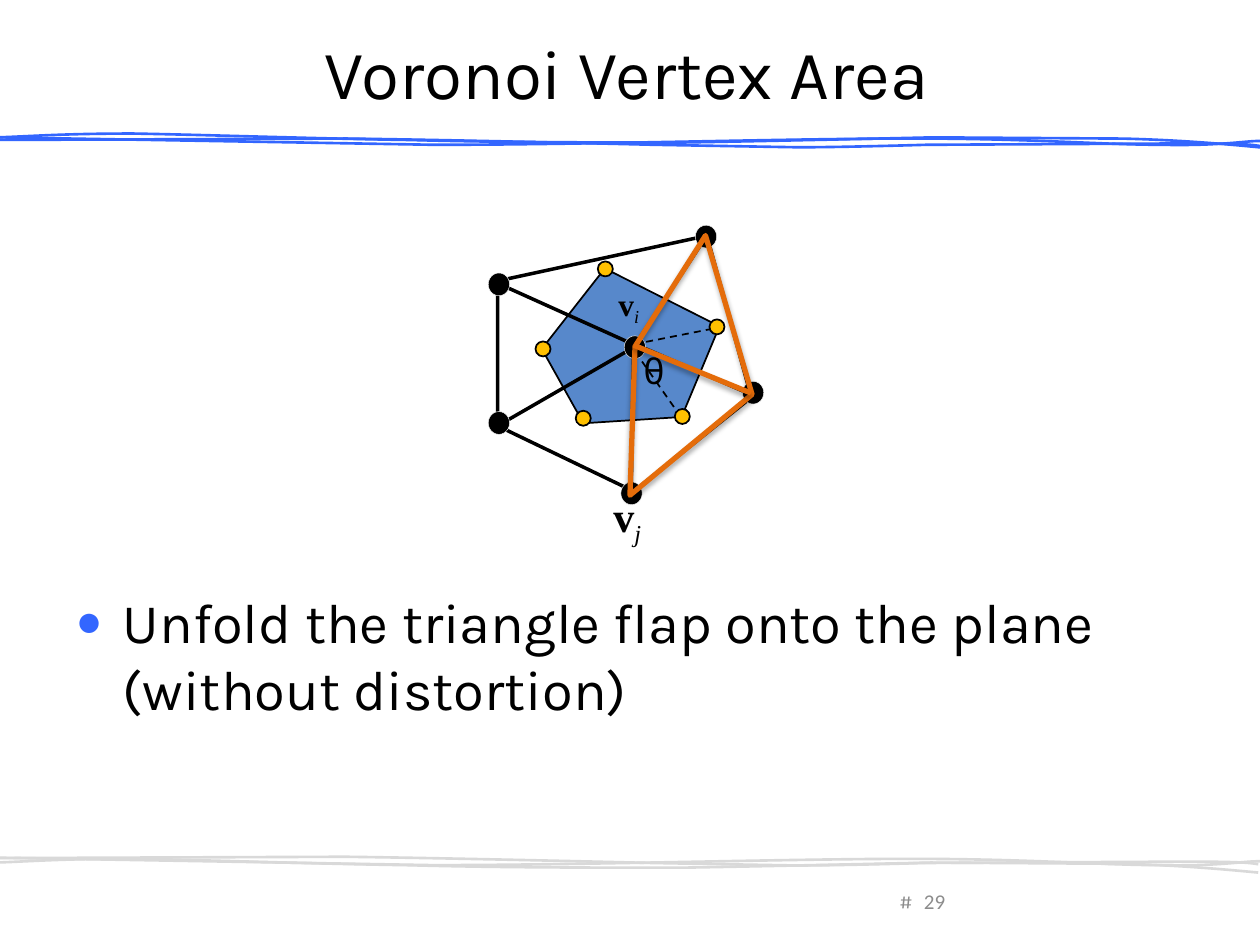
from lxml.etree import SubElement
from pptx import Presentation
from pptx.dml.color import RGBColor
from pptx.enum.dml import MSO_LINE
from pptx.enum.shapes import MSO_CONNECTOR, MSO_SHAPE
from pptx.enum.text import MSO_ANCHOR, MSO_AUTO_SIZE, PP_ALIGN
from pptx.oxml.ns import qn
from pptx.util import Pt

BLACK = RGBColor(0, 0, 0)
WHITE = RGBColor(255, 255, 255)
BLUE = RGBColor(0x33, 0x66, 0xFF)
SILVER = RGBColor(0xD9, 0xD9, 0xD9)
GREY = RGBColor(0x8C, 0x8C, 0x8C)
STEEL = RGBColor(0x57, 0x88, 0xCB)
GOLD = RGBColor(0xFF, 0xC0, 0x00)
ORANGE = RGBColor(0xE4, 0x6C, 0x0A)

deck = Presentation()
deck.slide_width, deck.slide_height = Pt(720), Pt(540)
slide = deck.slides.add_slide(deck.slide_layouts[1])
shapes = slide.shapes


def trace(points, color, width, fill=None, close=False):
    spots = [(Pt(x), Pt(y)) for x, y in points]
    pen = shapes.build_freeform(*spots[0])
    pen.add_line_segments(spots[1:], close=close)
    shape = pen.convert_to_shape()
    shape.shadow.inherit = False
    shape.line.color.rgb = color
    shape.line.width = Pt(width)
    if fill:
        shape.fill.solid()
        shape.fill.fore_color.rgb = fill
    else:
        shape.fill.background()
    return shape


def write(shape, box, runs, size, color=BLACK, font="Karla", **frame):
    shape.left, shape.top, shape.width, shape.height = map(Pt, box)
    text = shape.text_frame
    look = {"word_wrap": True, "auto_size": MSO_AUTO_SIZE.NONE} | frame
    align = look.pop("align", PP_ALIGN.LEFT)
    for key, value in look.items():
        setattr(text, key, value)
    para = text.paragraphs[0]
    para.alignment = align
    para.space_before = Pt(0)
    for words, style in runs:
        run = para.add_run()
        run.text = words
        run.font.color.rgb = color
        for key, value in ({"name": font, "size": Pt(size)} | style).items():
            setattr(run.font, key, value)
    return para


waves = [
    (411.6, (-1, 78.5), [(248, 82.8), (335, 82.8, 451, 79.2, 521, 79.2),
                         (590, 79.2, 631, 82.8, 664, 82.8),
                         (697, 83.5, 711, 80.6, 720, 80.6),
                         (729, 80, 724, 80.6, 719, 80.6)]),
    (414.4, (-1, 78.5), [(19, 77.8, 37, 76.3, 76, 76.3),
                         (116, 77, 181, 79.2, 234, 80),
                         (286, 81.4, 341, 81.4, 391, 81.4),
                         (441, 80.6, 533, 78.5, 533, 78.5), (642, 79.2),
                         (673, 80, 697, 82, 720, 84.2)]),
    (410.4, (-1.5, 80), [(198, 79.2), (261, 80, 374, 82.8, 374, 82.8),
                         (456, 84.2), (482, 84.2, 529, 82.8, 529, 82.8),
                         (679, 82), (711, 82, 716, 82.8, 720, 83.5)]),
]
for color, left, low in [(BLUE, 0, 0), (SILVER, -1, 1)]:
    for drop, start, parts in waves:
        points = [start]
        for part in parts:
            points += zip(part[::2], part[1::2])
        wave = trace([(x + left, y + low * drop) for x, y in points], color, 1.5)
        legs = iter(list(wave._element.iter(qn("a:lnTo"))))
        for part in parts:
            leg = next(legs)
            if len(part) == 6:
                leg.tag = qn("a:cubicBezTo")
                for extra in (next(legs), next(legs)):
                    leg.append(extra[0])
                    extra.getparent().remove(extra)

write(shapes.title, (36, 22, 648, 38), [("Voronoi Vertex Area", {})], 39.6,
      align=PP_ALIGN.CENTER, vertical_anchor=MSO_ANCHOR.MIDDLE,
      margin_right=Pt(10.8))

body = slide.placeholders[1]
para = write(body, (36, 108, 648, 360),
             [("Unfold the triangle flap onto the plane (without distortion)", {})], 32,
             vertical_anchor=MSO_ANCHOR.TOP, margin_top=Pt(227.8))
props = para._p.get_or_add_pPr()
props.set("marL", str(Pt(27)))
props.set("indent", str(Pt(-27)))
tint = SubElement(props, qn("a:buClr"))
SubElement(tint, qn("a:srgbClr"), val=str(BLUE))
SubElement(props, qn("a:buSzPct"), val="80000")
SubElement(props, qn("a:buChar"), char="●")

for words, box, font, align in [
    ("#", (506.9, 504, 21.6, 21.6), "Karla", PP_ALIGN.CENTER),
    ("29", (500.4, 500.4, 46.8, 28.8), "Calibri", PP_ALIGN.RIGHT),
]:
    write(shapes.add_textbox(0, 0, 0, 0), box, [(words, {})], 12, GREY, font,
          align=align, vertical_anchor=MSO_ANCHOR.MIDDLE)

cell = [(309.6, 199.4), (345.6, 153.4), (411.1, 186.5), (389.5, 238.3), (333.4, 241.9)]
ring = [(404.6, 134.6), (284.4, 160.6), (284.4, 243.4), (364.3, 197.3),
        (430.6, 226.1), (362.2, 280.8), (284.4, 243.4)]
fan = [(283, 161.3), (362.9, 197.3), (403.9, 134.6), (429.1, 226.1)]
trace(cell, BLACK, 1, STEEL, True)
trace(ring, BLACK, 2)
trace(fan, BLACK, 2)

for start, end, width, dash in [
    ((362.2, 195.1), (360.7, 279.4), 2, MSO_LINE.SOLID),
    ((362.9, 200.9), (386.6, 234.7), 1, MSO_LINE.DASH),
    ((414, 186.5), (362.9, 196.6), 1, MSO_LINE.DASH),
]:
    edge = shapes.add_connector(MSO_CONNECTOR.STRAIGHT, *map(Pt, start + end))
    edge.line.color.rgb = BLACK
    edge.line.width = Pt(width)
    edge.line.dash_style = dash
    SubElement(edge._element.spPr, qn("a:effectLst"))

nodes = [(285.1, 162.5), (403.5, 135.2), (362.8, 198.4), (285.1, 241.7),
         (360.9, 281.9), (430.4, 224.4)]
sites = [(389.9, 238), (345.9, 153.7), (333.3, 239), (310.3, 199.4), (409.7, 186.8)]
for spots, wide, high, fill, rim, width in [
    (nodes, 12.2, 13, BLACK, WHITE, 0.25),
    (sites, 8.6, 8.6, GOLD, BLACK, 1),
]:
    for x, y in spots:
        dot = shapes.add_shape(MSO_SHAPE.OVAL, Pt(x - wide / 2), Pt(y - high / 2),
                               Pt(wide), Pt(high))
        dot.shadow.inherit = False
        dot.fill.solid()
        dot.fill.fore_color.rgb = fill
        dot.line.color.rgb = rim
        dot.line.width = Pt(width)

write(shapes.add_textbox(0, 0, 0, 0), (362.9, 196.6, 21.6, 29.5), [("θ", {})], 20,
      margin_left=Pt(5), margin_right=Pt(5), margin_top=Pt(2.9), margin_bottom=Pt(2.9))
for mark, box, size in [
    ("i", (346.3, 159.1, 27.4, 28.8), 18),
    ("j", (343.4, 276.5, 31, 36), 24),
]:
    para = write(shapes.add_textbox(0, 0, 0, 0), box,
                 [("v", {"bold": True}), (mark, {"italic": True})], size,
                 font="Times New Roman", word_wrap=False)
    para.runs[1]._r.get_or_add_rPr().set("baseline", "-25000")

flap = [(362.9, 198), (403.2, 134.6), (429.8, 225.4), (360, 283)]
fold = [(429.1, 224.6), (362.2, 197.3)]
for points, close in [(flap, True), (fold, False)]:
    shape = trace(points, ORANGE, 3, close=close)
    glow = SubElement(shape._element.spPr.find(qn("a:effectLst")), qn("a:outerShdw"),
                      blurRad=str(Pt(3.1)), dist=str(Pt(1.8)), dir="5400000", rotWithShape="0")
    shade = SubElement(glow, qn("a:srgbClr"), val=str(BLACK))
    SubElement(shade, qn("a:alpha"), val="35000")

deck.save("out.pptx")
